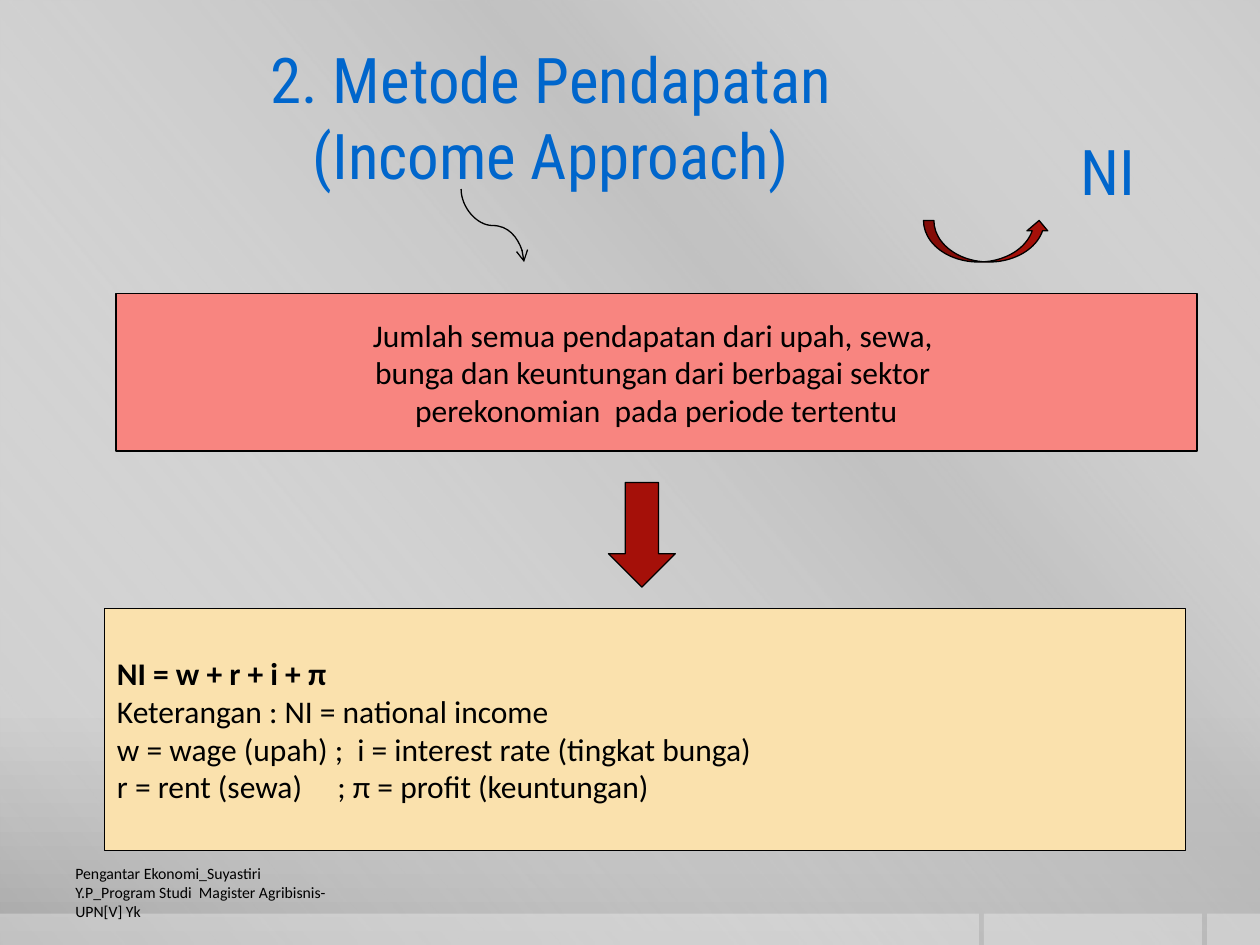
"""Build the slide on the income approach to national income."""
import lxml.etree
import pptx
import pptx.dml.color
import pptx.enum.dml
import pptx.enum.shapes
import pptx.enum.text
import pptx.oxml
import pptx.oxml.ns
import pptx.util

Inches, Pt = pptx.util.Inches, pptx.util.Pt
RGBColor = pptx.dml.color.RGBColor
SHAPE = pptx.enum.shapes.MSO_SHAPE
ALIGN = pptx.enum.text.PP_ALIGN
MIDDLE = pptx.enum.text.MSO_ANCHOR.MIDDLE
TOP = pptx.enum.text.MSO_ANCHOR.TOP
qn = pptx.oxml.ns.qn
sub = lxml.etree.SubElement

BLACK = RGBColor(0x00, 0x00, 0x00)
WHITE = RGBColor(0xFF, 0xFF, 0xFF)
BLUE = RGBColor(0x00, 0x66, 0xCC)
PALE_BLUE = RGBColor(0x99, 0xCC, 0xFF)
PINK = RGBColor(0xF8, 0x85, 0x80)
CREAM = RGBColor(0xFA, 0xE1, 0xAD)
RED = RGBColor(0xA5, 0x10, 0x09)
SILVER = RGBColor(0xCB, 0xCB, 0xCB)
LIGHT_GREY = RGBColor(0xC8, 0xC8, 0xC8)
MID_GREY = RGBColor(0xBF, 0xBF, 0xBF)
DARK_GREY = RGBColor(0xA7, 0xA7, 0xA7)


def set_gradient(fill, parent, stops, angle):
    fill.gradient()
    grad = next(parent.iter(qn("a:gradFill")))
    for child in list(grad):
        grad.remove(child)
    stop_list = sub(grad, qn("a:gsLst"))
    for pos, color, alpha in stops:
        gs = sub(stop_list, qn("a:gs"), pos=str(pos * 1000))
        clr = sub(gs, qn("a:srgbClr"), val=str(color))
        sub(clr, qn("a:alpha"), val=str(alpha * 1000))
    sub(grad, qn("a:lin"), ang=str(angle * 60000), scaled="0")


def write(tf, lines, size, font, color, align, anchor=MIDDLE, wrap=False):
    tf.word_wrap = wrap
    tf.vertical_anchor = anchor
    for i, line in enumerate(lines):
        p = tf.paragraphs[0] if i == 0 else tf.add_paragraph()
        p.text = line
        p.alignment = align
        p.font.size = Pt(size)
        p.font.name = font
        p.font.color.rgb = color


prs = pptx.Presentation()
prs.slide_width, prs.slide_height = Inches(10), Inches(7.5)
s = prs.slides.add_slide(prs.slide_layouts[6])
set_gradient(s.background.fill, s._element,
             [(0, SILVER, 100), (76, LIGHT_GREY, 100), (100, DARK_GREY, 100)], 90)

sheen = s.shapes.add_shape(SHAPE.RECTANGLE, 0, 0, prs.slide_width, prs.slide_height)
sheen.shadow.inherit = False
sheen.line.fill.background()
set_gradient(sheen.fill, sheen._element,
             [(0, WHITE, 0), (34, MID_GREY, 61), (38, MID_GREY, 76), (100, WHITE, 0)], 140)

for left, width in [(9.58, 0.42), (7.81, 1.73), (0, 7.77)]:
    sp = s.shapes.add_shape(SHAPE.RECTANGLE, Inches(left), Inches(7.25), Inches(width), Inches(0.25))
    sp.shadow.inherit = False
    sp.line.fill.background()
    sp.fill.solid()
    sp.fill.fore_color.rgb = WHITE
    sub(next(sp._element.spPr.iter(qn("a:srgbClr"))), qn("a:alpha"), val="30000")

footer = s.shapes.add_textbox(Inches(0.5), Inches(6.83), Inches(2.33), Inches(0.5))
write(footer.text_frame, ["Pengantar Ekonomi_Suyastiri Y.P_Program Studi  Magister Agribisnis-UPN[V] Yk"],
      9, "Calibri", BLACK, ALIGN.LEFT, wrap=True)

for text, left, top, width, height, anchor in [
    ("2. Metode Pendapatan\v(Income Approach)", 0.5, 0.3, 7.75, 1.25, MIDDLE),
    ("NI", 8.42, 1, 0.75, 0.67, TOP),
]:
    sp = s.shapes.add_textbox(Inches(left), Inches(top), Inches(width), Inches(height))
    write(sp.text_frame, [text], 36, "Roboto Condensed", BLUE, ALIGN.CENTER, anchor)
    ln = lxml.etree.Element(qn("a:ln"), w=str(Pt(1.5)))
    sub(sub(ln, qn("a:solidFill")), qn("a:srgbClr"), val=str(PALE_BLUE))
    next(sp._element.iter(qn("a:defRPr"))).insert(0, ln)

shapes = []
for kind, left, top, width, height, color in [
    (SHAPE.RECTANGLE, 0.92, 2.33, 8.58, 1.25, PINK),
    (SHAPE.RECTANGLE, 0.83, 4.83, 8.58, 1.92, CREAM),
    (SHAPE.DOWN_ARROW, 4.83, 3.83, 0.53, 0.83, RED),
    (SHAPE.CURVED_UP_ARROW, 7.33, 1.75, 1, 0.33, RED),
]:
    sp = s.shapes.add_shape(kind, Inches(left), Inches(top), Inches(width), Inches(height))
    sp.shadow.inherit = False
    sp.fill.solid()
    sp.fill.fore_color.rgb = color
    sp.line.color.rgb = BLACK
    sp.line.width = Pt(0.75)
    shapes.append(sp)
definition, formula = shapes[:2]

write(definition.text_frame, [
    "Jumlah semua pendapatan dari upah, sewa, ",
    "bunga dan keuntungan dari berbagai sektor ",
    "perekonomian  pada periode tertentu",
], 18, "Calibri", BLACK, ALIGN.CENTER)
tf = formula.text_frame
write(tf, [
    "NI = w + r + i + π",
    "Keterangan : NI = national income",
    "w = wage (upah) ;  i = interest rate (tingkat bunga)",
    "r = rent (sewa)\t; π = profit (keuntungan)",
], 18, "Calibri", BLACK, ALIGN.LEFT, wrap=True)
tf.paragraphs[0].font.bold = True
tabs = lxml.etree.Element(qn("a:tabLst"))
sub(tabs, qn("a:tab"), pos=str(Inches(1.75)), algn="l")
tf.paragraphs[3]._p.pPr.insert(0, tabs)

curve = s.shapes.add_connector(pptx.enum.shapes.MSO_CONNECTOR.CURVE,
                               Inches(3.62), Inches(1.54), Inches(4.2), Inches(2.04))
curve.line.color.rgb = BLACK
curve.line.width = Pt(0.75)
sub(curve.line._get_or_add_ln(), qn("a:tailEnd"), type="arrow")
spPr = curve._element.spPr
sub(spPr, qn("a:effectLst"))
xfrm = spPr.find(qn("a:xfrm"))
xfrm.set("rot", str(270 * 60000))
xfrm.set("flipH", "1")

prs.save("out.pptx")
